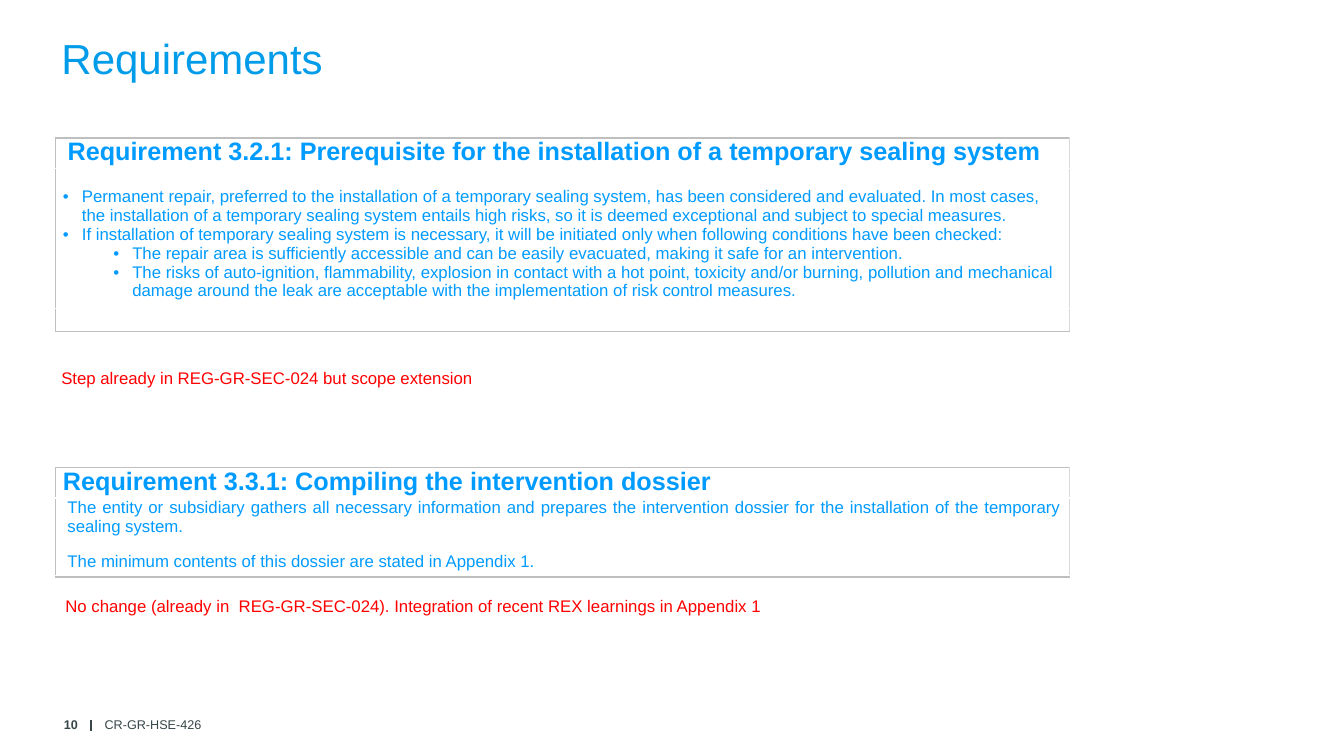
import pptx
import pptx.util
import pptx.dml.color
import pptx.enum.text
import pptx.enum.shapes
import pptx.oxml.ns
from lxml import etree

Pt = pptx.util.Pt
qn = pptx.oxml.ns.qn
ALIGN = pptx.enum.text.PP_ALIGN
ANCHOR = pptx.enum.text.MSO_ANCHOR
COLORS = {"title": "009CEA", "blue": "009BFF", "red": "FF0000",
          "gray": "374649", "border": "BFBFBF", "side": "D9D9D9"}


def write(para, text, size, color, bold=False, align=ALIGN.LEFT):
    para.alignment = align
    span = para.add_run()
    span.text = text
    span.font.name = "Arial"
    span.font.size = Pt(size)
    span.font.bold = bold
    span.font.color.rgb = pptx.dml.color.RGBColor.from_string(COLORS[color])


def add_border(cell, position, side, color):
    line = etree.Element(qn("a:ln" + side), w=str(Pt(1)))
    fill = etree.SubElement(line, qn("a:solidFill"))
    etree.SubElement(fill, qn("a:srgbClr"), val=COLORS[color])
    cell._tc.get_or_add_tcPr().insert(position, line)


deck = pptx.Presentation()
deck.slide_width, deck.slide_height = Pt(960), Pt(540)
page = deck.slides.add_slide(deck.slide_layouts[5])

title = page.shapes.title
title.left, title.top, title.width, title.height = Pt(36.7), Pt(19.4), Pt(765.4), Pt(79.2)
title.text_frame.vertical_anchor = ANCHOR.TOP
write(title.text_frame.paragraphs[0], "Requirements", 30, "title")

divider = page.shapes.add_connector(
    pptx.enum.shapes.MSO_CONNECTOR.STRAIGHT, Pt(65), Pt(514), Pt(65), Pt(522))
divider.line.width = Pt(1)
divider.line.color.rgb = pptx.dml.color.RGBColor.from_string(COLORS["gray"])
etree.SubElement(divider._element.spPr, qn("a:effectLst"))

LABELS = [
    ("CR-GR-HSE-426", 67.7, 507.6, 283.7, 20.2, 9, "gray", False, ALIGN.LEFT, ANCHOR.MIDDLE),
    ("10", 17.3, 507.6, 45.4, 20.2, 9, "gray", True, ALIGN.RIGHT, ANCHOR.MIDDLE),
    ("Step already in REG-GR-SEC-024 but scope extension",
     36.7, 259.2, 724.3, 21.6, 12, "red", False, ALIGN.LEFT, ANCHOR.TOP),
    ("No change (already in  REG-GR-SEC-024). Integration of recent REX learnings in Appendix 1",
     39.6, 421.9, 724.3, 39.6, 12, "red", False, ALIGN.LEFT, ANCHOR.TOP),
]
for text, left, top, width, height, size, color, bold, align, anchor in LABELS:
    box = page.shapes.add_textbox(Pt(left), Pt(top), Pt(width), Pt(height))
    box.text_frame.word_wrap = True
    box.text_frame.vertical_anchor = anchor
    write(box.text_frame.paragraphs[0], text, size, color, bold, align)

REQUIREMENTS = [
    {"top": 98.6, "rows": [20.7, 94, 16.5], "heading_indent": 3.3, "body_top": 13.8,
     "heading": "Requirement 3.2.1: Prerequisite for the installation of a temporary sealing system",
     "gap": 0, "align": ALIGN.LEFT, "body": [
         (13.5, "•", "Permanent repair, preferred to the installation of a temporary sealing system, "
          "has been considered and evaluated. In most cases, the installation of a temporary sealing "
          "system entails high risks, so it is deemed exceptional and subject to special measures."),
         (13.5, "•", "If installation of temporary sealing system is necessary, it will be initiated "
          "only when following conditions have been checked:"),
         (49.5, "•", "The repair area is sufficiently accessible and can be easily evacuated, "
          "making it safe for an intervention."),
         (49.5, "•", "The risks of auto-ignition, flammability, explosion in contact with a hot point, "
          "toxicity and/or burning, pollution and mechanical damage around the leak are acceptable "
          "with the implementation of risk control measures.")]},
    {"top": 334.1, "rows": [20.7, 52, 1.2], "heading_indent": 0, "body_top": 0,
     "heading": "Requirement 3.3.1: Compiling the intervention dossier",
     "gap": 12, "align": ALIGN.JUSTIFY, "body": [
         (3.2, "", "The entity or subsidiary gathers all necessary information and prepares the "
          "intervention dossier for the installation of the temporary sealing system."),
         (3.2, "", "The minimum contents of this dossier are stated in Appendix 1.")]},
]
for requirement in REQUIREMENTS:
    table = page.shapes.add_table(3, 1, Pt(39.6), Pt(requirement["top"]), Pt(724.3),
                                  Pt(sum(requirement["rows"]))).table
    table.first_row = table.horz_banding = False
    for index, height in enumerate(requirement["rows"]):
        table.rows[index].height = Pt(height)
        cell = table.cell(index, 0)
        cell.fill.background()
        cell.margin_left = cell.margin_right = Pt(5.4)
        cell.margin_top = cell.margin_bottom = 0
        add_border(cell, 0, "L", "border")
        add_border(cell, 1, "R", "side")
        if index == 0:
            add_border(cell, 2, "T", "border")
        if index == 2:
            add_border(cell, 2, "B", "border")

    heading = table.cell(0, 0).text_frame.paragraphs[0]
    heading._p.get_or_add_pPr().set("marL", str(Pt(requirement["heading_indent"])))
    write(heading, requirement["heading"], 18, "blue", True)

    body = table.cell(1, 0)
    body.margin_top = Pt(requirement["body_top"])
    for index, (indent, bullet, text) in enumerate(requirement["body"]):
        para = body.text_frame.add_paragraph() if index else body.text_frame.paragraphs[0]
        properties = para._p.get_or_add_pPr()
        properties.set("marL", str(Pt(indent)))
        if bullet:
            properties.set("indent", str(-Pt(13.5)))
            etree.SubElement(properties, qn("a:buFont"), typeface="Arial")
            etree.SubElement(properties, qn("a:buChar"), char=bullet)
        if index:
            para.space_before = Pt(requirement["gap"])
        write(para, text, 12, "blue", False, requirement["align"])

    table.cell(2, 0).text_frame.paragraphs[0].font.size = Pt(1)

deck.save("out.pptx")
